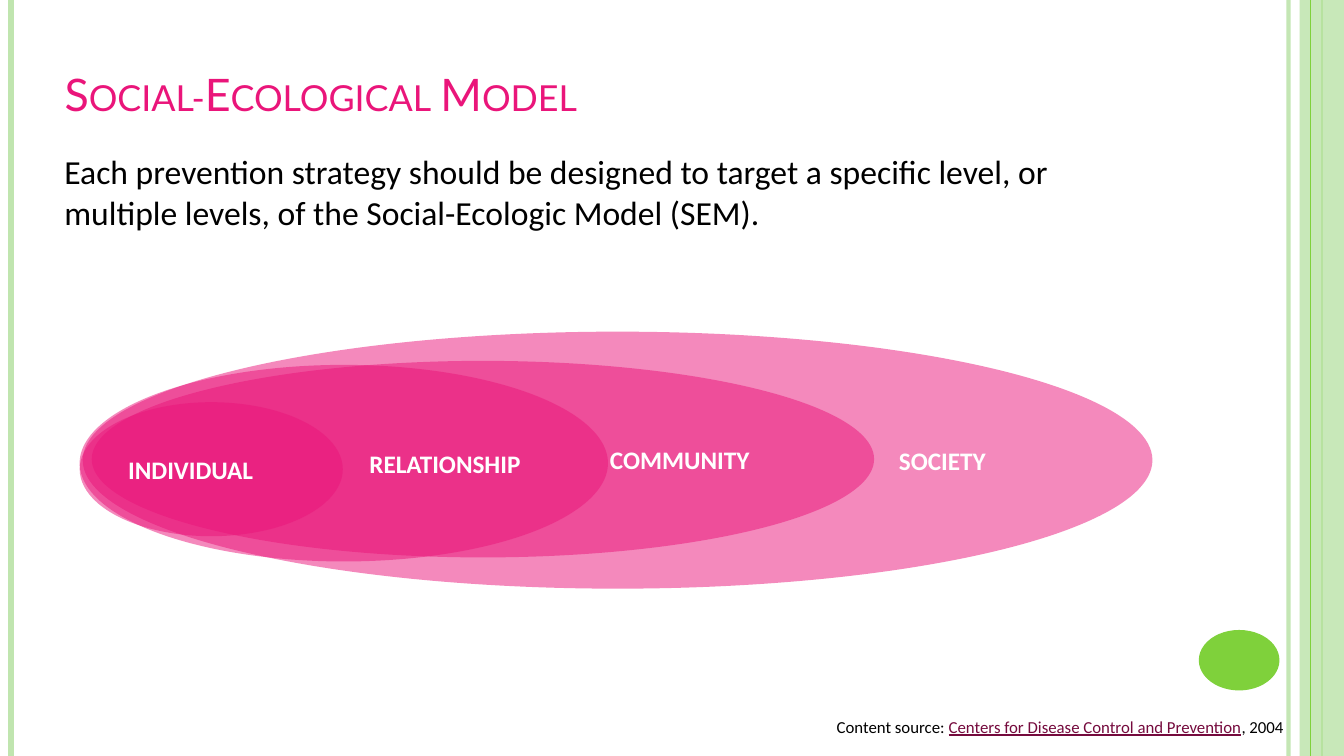
"""Build the Social-Ecological Model slide with its nested ellipses."""
from dataclasses import dataclass

import lxml.etree
import pptx
import pptx.dml.color
import pptx.enum.shapes
import pptx.enum.text
import pptx.oxml.ns
import pptx.util

Inches = pptx.util.Inches
Align = pptx.enum.text.PP_ALIGN
Anchor = pptx.enum.text.MSO_ANCHOR
Shape = pptx.enum.shapes.MSO_SHAPE


@dataclass(frozen=True)
class Theme:
    """Colours, fonts and type sizes of the slide."""
    pink: str = "EA157A"
    green: str = "7FD13B"
    pale_green: str = "C0E5AF"
    link: str = "750A3D"
    black: str = "000000"
    white: str = "FFFFFF"
    heading_font: str = "Lato"
    body_font: str = "Calibri"
    title_size: int = 32
    body_size: int = 24
    label_size: int = 18
    source_size: int = 12


THEME = Theme()
WIDTH, HEIGHT = 13.33, 7.5


@dataclass(frozen=True)
class Rule:
    """A vertical line running the full height of the slide."""
    x: float
    color: str
    weight: float
    opacity: int = 100


@dataclass(frozen=True)
class Block:
    """A filled shape with an optional label."""
    left: float
    top: float
    width: float
    height: float
    color: str = THEME.pink
    opacity: int = 50
    kind: Shape = Shape.OVAL
    label: str = ""
    align: Align = Align.RIGHT


BACK_RULES = (
    Rule(12.78, THEME.pale_green, 3, 93),
    Rule(0.11, THEME.pale_green, 4.5),
    Rule(13.11, THEME.green, 1.5),
)
BAND = Block(12.89, 0, 0.44, HEIGHT, THEME.pale_green, 87, Shape.RECTANGLE)
FRONT_RULE = Rule(13, THEME.green, 0.75)
BADGE = Block(11.89, 6.25, 0.8, 0.6, THEME.green, 100)
LEVELS = (
    Block(0.82, 3.29, 10.61, 2.55, label="SOCIETY"),
    Block(0.91, 3.58, 7.76, 1.95, label="COMMUNITY"),
    Block(0.79, 3.62, 5.24, 1.95, label="RELATIONSHIP"),
    Block(0.79, 3.99, 2.61, 1.33, label="INDIVIDUAL", align=Align.LEFT),
)
SOURCE = (
    ("Content source: ", THEME.black, False),
    ("Centers for Disease Control and Prevention", THEME.link, True),
    (", 2004", THEME.black, False),
)


def rgb(color: str) -> pptx.dml.color.RGBColor:
    """Turn a hex string into a colour."""
    return pptx.dml.color.RGBColor.from_string(color)


def set_opacity(element, percent: int) -> None:
    """Make the first solid colour below an element translucent."""
    if percent < 100:
        color = next(element.iter(pptx.oxml.ns.qn("a:srgbClr")))
        alpha = lxml.etree.SubElement(color, pptx.oxml.ns.qn("a:alpha"))
        alpha.set("val", str(percent * 1000))


def style_run(span, size: float, color: str, font: str = THEME.body_font) -> None:
    """Give a run its font, size and colour."""
    span.font.name = font
    span.font.size = pptx.util.Pt(size)
    span.font.color.rgb = rgb(color)


def draw_rule(page, rule: Rule) -> None:
    """Draw one vertical line."""
    line = page.shapes.add_connector(
        pptx.enum.shapes.MSO_CONNECTOR.STRAIGHT,
        Inches(rule.x), Inches(0), Inches(rule.x), Inches(HEIGHT))
    line.line.color.rgb = rgb(rule.color)
    line.line.width = pptx.util.Pt(rule.weight)
    properties = line._element.spPr
    set_opacity(properties, rule.opacity)
    lxml.etree.SubElement(properties, pptx.oxml.ns.qn("a:effectLst"))


def draw_block(shapes, block: Block) -> None:
    """Draw one filled shape and its label."""
    shape = shapes.add_shape(
        block.kind, Inches(block.left), Inches(block.top),
        Inches(block.width), Inches(block.height))
    shape.shadow.inherit = False
    shape.fill.solid()
    shape.fill.fore_color.rgb = rgb(block.color)
    set_opacity(shape._element.spPr, block.opacity)
    shape.line.fill.background()
    if block.label:
        shape.text_frame.text = block.label
        shape.text_frame.vertical_anchor = Anchor.MIDDLE
        para = shape.text_frame.paragraphs[0]
        para.alignment = block.align
        style_run(para.runs[0], THEME.label_size, THEME.white)
        para.runs[0].font.bold = True


def write_title(page) -> None:
    """Place and format the title placeholder."""
    title = page.shapes.title
    title.left, title.top = Inches(0.54), Inches(0)
    title.width, title.height = Inches(10.89), Inches(1.25)
    frame = title.text_frame
    frame.text = "Social-Ecological Model"
    frame.auto_size = pptx.enum.text.MSO_AUTO_SIZE.NONE
    frame.vertical_anchor = Anchor.BOTTOM
    para = frame.paragraphs[0]
    para.alignment = Align.LEFT
    style_run(para.runs[0], THEME.title_size, THEME.pink, THEME.heading_font)
    para.runs[0].font._element.set("cap", "small")


def write_body(page) -> None:
    """Write the introductory sentence."""
    box = page.shapes.add_textbox(
        Inches(0.54), Inches(1.45), Inches(10.89), Inches(5.33))
    frame = box.text_frame
    frame.word_wrap = True
    frame.text = ("Each prevention strategy should be designed to target a specific "
                  "level, or multiple levels, of the Social-Ecologic Model (SEM).")
    para = frame.paragraphs[0]
    para.space_before = pptx.util.Pt(6)
    style_run(para.runs[0], THEME.body_size, THEME.black)


def write_source(page) -> None:
    """Write the content source line."""
    box = page.shapes.add_textbox(
        Inches(8.2), Inches(7.06), Inches(4.63), Inches(0.3))
    box.text_frame.word_wrap = False
    box.text_frame.auto_size = pptx.enum.text.MSO_AUTO_SIZE.SHAPE_TO_FIT_TEXT
    para = box.text_frame.paragraphs[0]
    for words, color, underlined in SOURCE:
        span = para.add_run()
        span.text = words
        style_run(span, THEME.source_size, color)
        span.font.underline = underlined


def main() -> None:
    """Assemble and save the deck."""
    deck = pptx.Presentation()
    deck.slide_width, deck.slide_height = Inches(WIDTH), Inches(HEIGHT)
    page = deck.slides.add_slide(deck.slide_layouts.get_by_name("Title Only"))
    for rule in BACK_RULES:
        draw_rule(page, rule)
    draw_block(page.shapes, BAND)
    draw_rule(page, FRONT_RULE)
    draw_block(page.shapes, BADGE)
    write_title(page)
    write_body(page)
    model = page.shapes.add_group_shape()
    for level in LEVELS:
        draw_block(model.shapes, level)
    write_source(page)
    deck.save("out.pptx")


if __name__ == "__main__":
    main()
